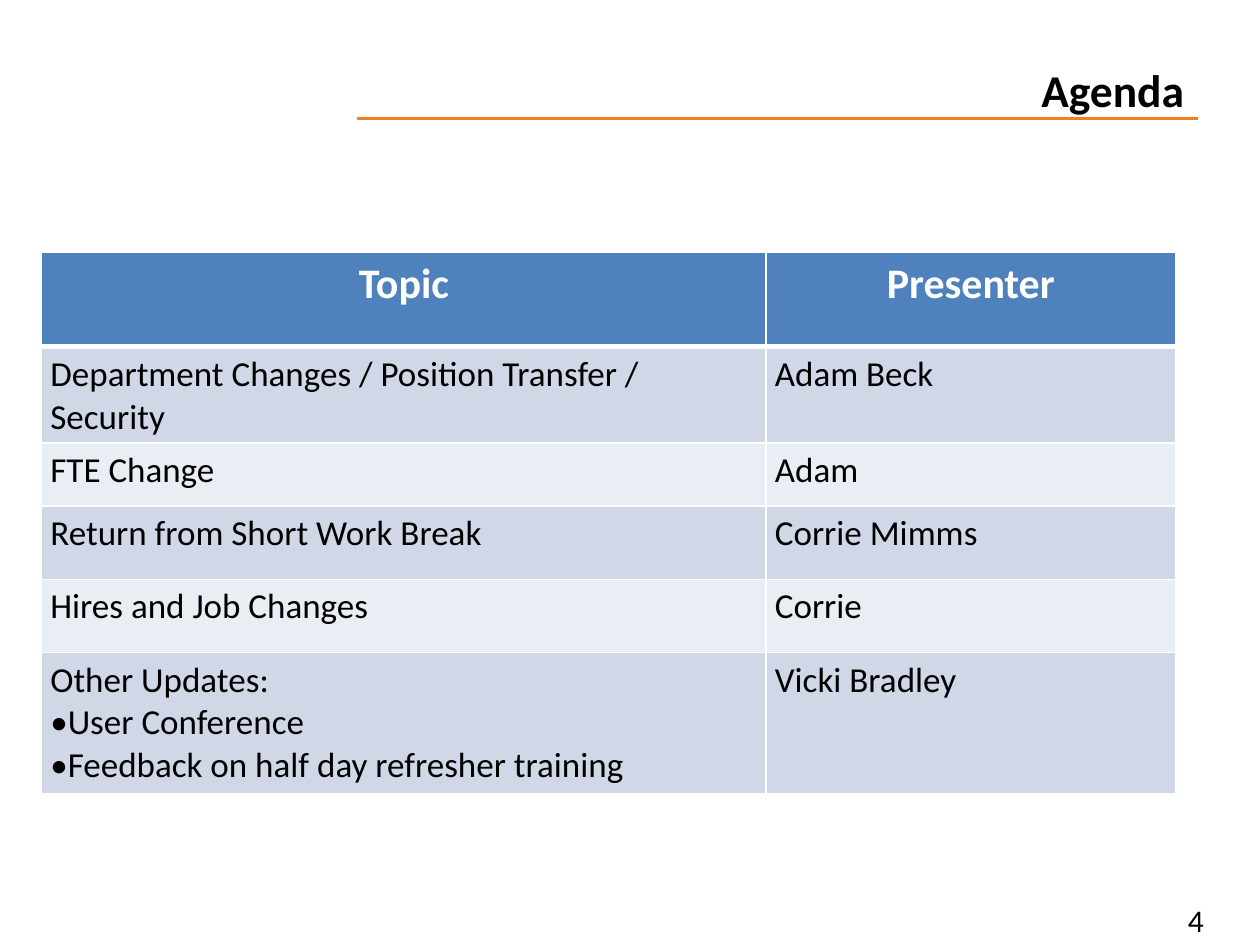
"""Build the agenda slide with its table of topics and presenters."""
from lxml import etree
from pptx import Presentation
from pptx.dml.color import RGBColor
from pptx.enum import shapes, text
from pptx.oxml import ns
from pptx.util import Inches, Pt

THEME = {
    "font": "Calibri",
    "black": RGBColor(0x00, 0x00, 0x00),
    "white": RGBColor(0xFF, 0xFF, 0xFF),
    "orange": RGBColor(0xF1, 0x7E, 0x1F),
    "header": RGBColor(0x4F, 0x81, 0xBD),
    "bands": [RGBColor(0xE9, 0xED, 0xF4), RGBColor(0xD0, 0xD8, 0xE8)],
    "title_size": Pt(26),
    "header_size": Pt(24),
    "body_size": Pt(20),
    "number_size": Pt(18),
}
AGENDA = [
    (0.75, "Topic", "Presenter"),
    (0.75, "Department Changes / Position Transfer / Security", "Adam Beck"),
    (0.5, "FTE Change", "Adam"),
    (0.58, "Return from Short Work Break", "Corrie Mimms"),
    (0.58, "Hires and Job Changes", "Corrie"),
    (1.12, "Other Updates:\n•User Conference\n•Feedback on half day refresher training",
     "Vicki Bradley"),
]
COLUMN_WIDTHS = [5.75, 3.25]


def write(frame, content, size, color, bold=False, align=text.PP_ALIGN.LEFT):
    frame.text = content
    for paragraph in frame.paragraphs:
        paragraph.alignment = align
        paragraph.space_before = Pt(0)
        paragraph.font.color.rgb = color
        for key, value in {"name": THEME["font"], "size": size, "bold": bold}.items():
            setattr(paragraph.font, key, value)


def add_borders(cell, widths):
    properties = cell._tc.get_or_add_tcPr()
    for position, (side, width) in enumerate(widths.items()):
        border = etree.Element(ns.qn(f"a:ln{side}"), w=str(Pt(width)))
        fill = etree.SubElement(border, ns.qn("a:solidFill"))
        etree.SubElement(fill, ns.qn("a:srgbClr"), val=str(THEME["white"]))
        properties.insert(position, border)


deck = Presentation()
deck.slide_width, deck.slide_height = Inches(10), Inches(7.5)
slide = deck.slides.add_slide(deck.slide_layouts[5])

rule = slide.shapes.add_connector(
    shapes.MSO_CONNECTOR.STRAIGHT, Inches(2.83), Inches(0.94), Inches(9.51), Inches(0.94))
rule.line.color.rgb = THEME["orange"]
rule.line.width = Pt(2)
etree.SubElement(rule._element.spPr, ns.qn("a:effectLst"))

title = slide.shapes.title
title_place = {"left": 4.08, "top": 0.42, "width": 5.42, "height": 0.58}
for key, value in title_place.items():
    setattr(title, key, Inches(value))
title.text_frame.vertical_anchor = text.MSO_ANCHOR.MIDDLE
write(title.text_frame, "Agenda", THEME["title_size"], THEME["black"], True,
      text.PP_ALIGN.RIGHT)

page_number = slide.shapes.add_textbox(Inches(9.33), Inches(7.1), Inches(0.66), Inches(0.4))
page_number.text_frame.word_wrap = True
write(page_number.text_frame, "4", THEME["number_size"], THEME["black"])

agenda = slide.shapes.add_table(
    len(AGENDA), len(COLUMN_WIDTHS), Inches(0.33), Inches(2),
    Inches(sum(COLUMN_WIDTHS)), Inches(sum(row[0] for row in AGENDA))).table
for column, width in zip(agenda.columns, COLUMN_WIDTHS):
    column.width = Inches(width)

margins = {"margin_left": 0.07, "margin_right": 0.07, "margin_top": 0.05, "margin_bottom": 0.05}
for row_index, (height, *entries) in enumerate(AGENDA):
    agenda.rows[row_index].height = Inches(height)
    is_header = row_index == 0
    for column_index, entry in enumerate(entries):
        cell = agenda.cell(row_index, column_index)
        for key, value in margins.items():
            setattr(cell, key, Inches(value))
        cell.fill.solid()
        cell.fill.fore_color.rgb = THEME["header"] if is_header else THEME["bands"][row_index % 2]
        if is_header:
            write(cell.text_frame, entry, THEME["header_size"], THEME["white"], True,
                  text.PP_ALIGN.CENTER)
        else:
            write(cell.text_frame, entry, THEME["body_size"], THEME["black"])
        add_borders(cell, {"L": 1, "R": 1, "T": 3 if row_index == 1 else 1,
                           "B": 3 if is_header else 1})

deck.save("out.pptx")
